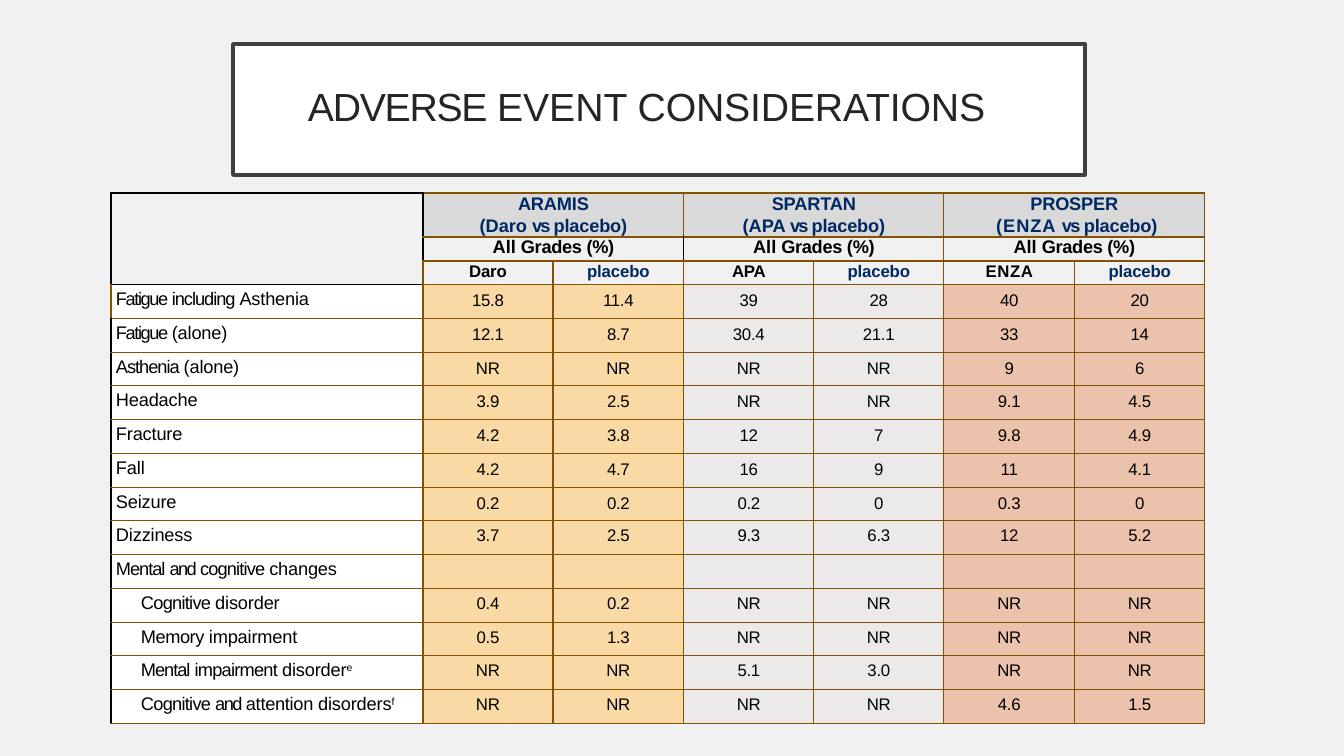
from dataclasses import dataclass

from lxml import etree
from pptx import Presentation
from pptx.dml.color import RGBColor
from pptx.enum.shapes import MSO_SHAPE
from pptx.enum.text import MSO_ANCHOR, PP_ALIGN
from pptx.oxml.ns import qn
from pptx.util import Emu, Pt

RECTANGLE = MSO_SHAPE.RECTANGLE
TOP = MSO_ANCHOR.TOP
LEFT, CENTER = PP_ALIGN.LEFT, PP_ALIGN.CENTER

# Rich text is a list of (words, letter spacing in points)
TITLE = [("ADVERSE ", -0.9), ("EVENT ", 0), ("CONSIDERATIONS", -0.1)]
GRADES = [("All ", 0), ("Grades (%)", -0.2)]
PLACEBO = [("placebo", -0.1)]

# Trial, comparison, drug, indent of the comparison line
TRIALS = [
    ([("ARAMIS", -0.1)], [("(Daro ", 0), ("vs ", -1.3), ("placebo)", -0.1)], [("Daro", -0.1)], 0),
    ([("SPARTAN", -0.1)], [("(APA ", 0), ("vs ", -1.3), ("placebo)", -0.1)], [("APA", -0.2)], 0),
    ([("PROSPER", -0.1)], [("(ENZA ", 0.7), ("vs ", -1.2), ("placebo)", -0.1)], [("ENZA", 0.4)], 5),
]

# Label, indent level, footnote mark, drug and placebo rates for each trial
EVENTS = [
    ([("Fatigue ", -1), ("including ", -0.7), ("Asthenia", -0.1)], 0, "",
     ("15.8", "11.4", "39", "28", "40", "20")),
    ([("Fatigue ", -1), ("(alone)", -0.1)], 0, "", ("12.1", "8.7", "30.4", "21.1", "33", "14")),
    ([("Asthenia ", -0.7), ("(alone)", -0.1)], 0, "", ("NR", "NR", "NR", "NR", "9", "6")),
    ([("Headache", -0.1)], 0, "", ("3.9", "2.5", "NR", "NR", "9.1", "4.5")),
    ([("Fracture", -0.1)], 0, "", ("4.2", "3.8", "12", "7", "9.8", "4.9")),
    ([("Fall", -0.1)], 0, "", ("4.2", "4.7", "16", "9", "11", "4.1")),
    ([("Seizure", -0.1)], 0, "", ("0.2", "0.2", "0.2", "0", "0.3", "0")),
    ([("Dizziness", -0.1)], 0, "", ("3.7", "2.5", "9.3", "6.3", "12", "5.2")),
    ([("Mental ", -0.7), ("and ", -1.1), ("cognitive ", -0.6), ("changes", -0.1)], 0, "", ("",) * 6),
    ([("Cognitive ", -0.5), ("disorder", -0.1)], 1, "", ("0.4", "0.2", "NR", "NR", "NR", "NR")),
    ([("Memory ", -0.3), ("impairment", -0.1)], 1, "", ("0.5", "1.3", "NR", "NR", "NR", "NR")),
    ([("Mental ", -0.7), ("impairment ", -0.5), ("disorder", -0.1)], 1, "e",
     ("NR", "NR", "5.1", "3.0", "NR", "NR")),
    ([("Cognitive ", -0.5), ("and ", -1.1), ("attention", -0.2), (" disorders", -0.1)], 1, "f",
     ("NR", "NR", "NR", "NR", "4.6", "1.5")),
]


@dataclass(frozen=True)
class Theme:
    font: str = "Arial"
    page: str = "F1F1F1"
    white: str = "FFFFFF"
    black: str = "000000"
    title_ink: str = "252525"
    title_line: str = "404040"
    navy: str = "002863"
    grid: str = "845205"
    trial_head: str = "D9D9D9"
    trial_fills: tuple = ("FADAA4", "EBEAE8", "EBC2AB")
    title_size: float = 28
    label_size: float = 13
    mark_size: float = 12.8
    rate_size: float = 12
    title_weight: float = 2.52
    grid_weight: float = 1


THEME = Theme()
EMU_PER_PX = 914400 / 100.8
SLIDE_W, SLIDE_H = 1344, 756
TITLE_BOX = (233, 44, 852, 131)
TITLE_INDENT, TITLE_INSET = 75, 38
TABLE_LEFT, TABLE_TOP = 111, 193
LABEL_W, RATES_W = 312, 782
HEAD_HEIGHTS = [44, 24, 24]
EVENTS_H = 439
LABEL_INDENTS = (5, 30)
LABEL_INSET, RATE_INSET, ARM_INSET = 4, 6, 1


def px(length):
    return Emu(round(length * EMU_PER_PX))


def spread(total, count):
    """Split total into count nearly equal whole lengths."""
    edges = [round(total * i / count) for i in range(count + 1)]
    return [end - start for start, end in zip(edges, edges[1:])]


def write(paragraph, runs, *, size, color, bold=False, align=LEFT, indent=0, line=None, mark=""):
    paragraph.alignment = align
    if line:
        paragraph.line_spacing = Pt(line)
    if indent:
        paragraph._p.get_or_add_pPr().set("marL", str(px(indent)))
    marks = [(mark, -0.1)] if mark else []
    for words, spacing in runs + marks:
        run = paragraph.add_run()
        run.text = words
        run.font.name = THEME.font
        run.font.size = Pt(size)
        run.font.bold = bold
        run.font.color.rgb = RGBColor.from_string(color)
        run._r.get_or_add_rPr().set("spc", str(round(spacing * 100)))
    if mark:
        run.font.size = Pt(THEME.mark_size)
        run._r.get_or_add_rPr().set("baseline", "26000")


def add_box(slide, box, fill, line=None):
    shape = slide.shapes.add_shape(RECTANGLE, *map(px, box))
    shape.shadow.inherit = False
    shape.fill.solid()
    shape.fill.fore_color.rgb = RGBColor.from_string(fill)
    if line:
        shape.line.color.rgb = RGBColor.from_string(line)
        shape.line.width = Pt(THEME.title_weight)
    else:
        shape.line.fill.background()
    return shape


def black_sides(row, col):
    """Sides of a cell, among L, R, T and B, that are ruled in black."""
    if col == 0:
        return "LRTB" if row < 3 else "T" if row == 3 else "L"
    return {(0, 1): "L", (1, 1): "L", (1, 2): "R", (1, 3): "L"}.get((row, col), "")


def cell_fill(row, col):
    if col == 0:
        return THEME.white if row >= 3 else None
    if row == 0:
        return THEME.trial_head
    return THEME.trial_fills[(col - 1) // 2] if row >= 3 else None


def dress_cell(cell, row, col):
    cell.margin_left = cell.margin_right = cell.margin_top = cell.margin_bottom = 0
    cell.vertical_anchor = TOP
    properties = cell._tc.get_or_add_tcPr()
    for side in "LRTB":
        rule = etree.SubElement(properties, qn(f"a:ln{side}"), w=str(Pt(THEME.grid_weight)))
        ink = THEME.black if side in black_sides(row, col) else THEME.grid
        etree.SubElement(etree.SubElement(rule, qn("a:solidFill")), qn("a:srgbClr"), val=ink)
    fill = cell_fill(row, col)
    if fill:
        cell.fill.solid()
        cell.fill.fore_color.rgb = RGBColor.from_string(fill)
    else:
        cell.fill.background()


def fill_heads(table):
    table.cell(0, 0).merge(table.cell(2, 0))
    head = dict(size=THEME.label_size, bold=True, align=CENTER)
    for i, (trial, comparison, drug, indent) in enumerate(TRIALS):
        col = 1 + 2 * i
        for row in (0, 1):
            table.cell(row, col).merge(table.cell(row, col + 1))
        name = table.cell(0, col).text_frame
        write(name.paragraphs[0], trial, color=THEME.navy, line=15.5, **head)
        write(name.add_paragraph(), comparison, color=THEME.navy, line=15.5, indent=indent, **head)
        write(table.cell(1, col).text_frame.paragraphs[0], GRADES, color=THEME.black, **head)
        for offset, (arm, ink) in enumerate([(drug, THEME.black), (PLACEBO, THEME.navy)]):
            cell = table.cell(2, col + offset)
            cell.margin_top = px(ARM_INSET)
            write(cell.text_frame.paragraphs[0], arm, color=ink, **{**head, "size": THEME.rate_size})


def fill_events(table):
    for row, (label, level, mark, rates) in enumerate(EVENTS, len(HEAD_HEIGHTS)):
        label_cell = table.cell(row, 0)
        label_cell.margin_top = px(LABEL_INSET)
        write(label_cell.text_frame.paragraphs[0], label, size=THEME.label_size, color=THEME.black,
              indent=LABEL_INDENTS[level], mark=mark)
        for col, rate in enumerate(rates, 1):
            if rate:
                cell = table.cell(row, col)
                cell.margin_top = px(RATE_INSET)
                write(cell.text_frame.paragraphs[0], [(rate, -0.2 if len(rate) > 1 else 0)],
                      size=THEME.rate_size, color=THEME.black, align=CENTER)


def add_event_table(slide):
    widths = [LABEL_W] + spread(RATES_W, 2 * len(TRIALS))
    heights = HEAD_HEIGHTS + spread(EVENTS_H, len(EVENTS))
    area = (TABLE_LEFT, TABLE_TOP, sum(widths), sum(heights))
    table = slide.shapes.add_table(len(heights), len(widths), *map(px, area)).table
    table.first_row = table.horz_banding = False
    for column, width in zip(table.columns, widths):
        column.width = px(width)
    for row, height in enumerate(heights):
        table.rows[row].height = px(height)
        for col in range(len(widths)):
            dress_cell(table.cell(row, col), row, col)
    fill_heads(table)
    fill_events(table)
    # Keeps cells without words from stretching their rows
    for cell in table.iter_cells():
        if not cell.text:
            etree.SubElement(cell.text_frame.paragraphs[0]._p, qn("a:endParaRPr"),
                             sz=str(THEME.rate_size * 100))


def main():
    deck = Presentation()
    deck.slide_width, deck.slide_height = px(SLIDE_W), px(SLIDE_H)
    slide = deck.slides.add_slide(deck.slide_layouts[6])
    add_box(slide, (0, 0, SLIDE_W, SLIDE_H), THEME.page)
    title = add_box(slide, TITLE_BOX, THEME.white, THEME.title_line).text_frame
    title.word_wrap = True
    title.vertical_anchor = TOP
    title.margin_left = title.margin_right = title.margin_bottom = 0
    title.margin_top = px(TITLE_INSET)
    write(title.paragraphs[0], TITLE, size=THEME.title_size, color=THEME.title_ink, indent=TITLE_INDENT)
    add_event_table(slide)
    deck.save("out.pptx")


if __name__ == "__main__":
    main()
